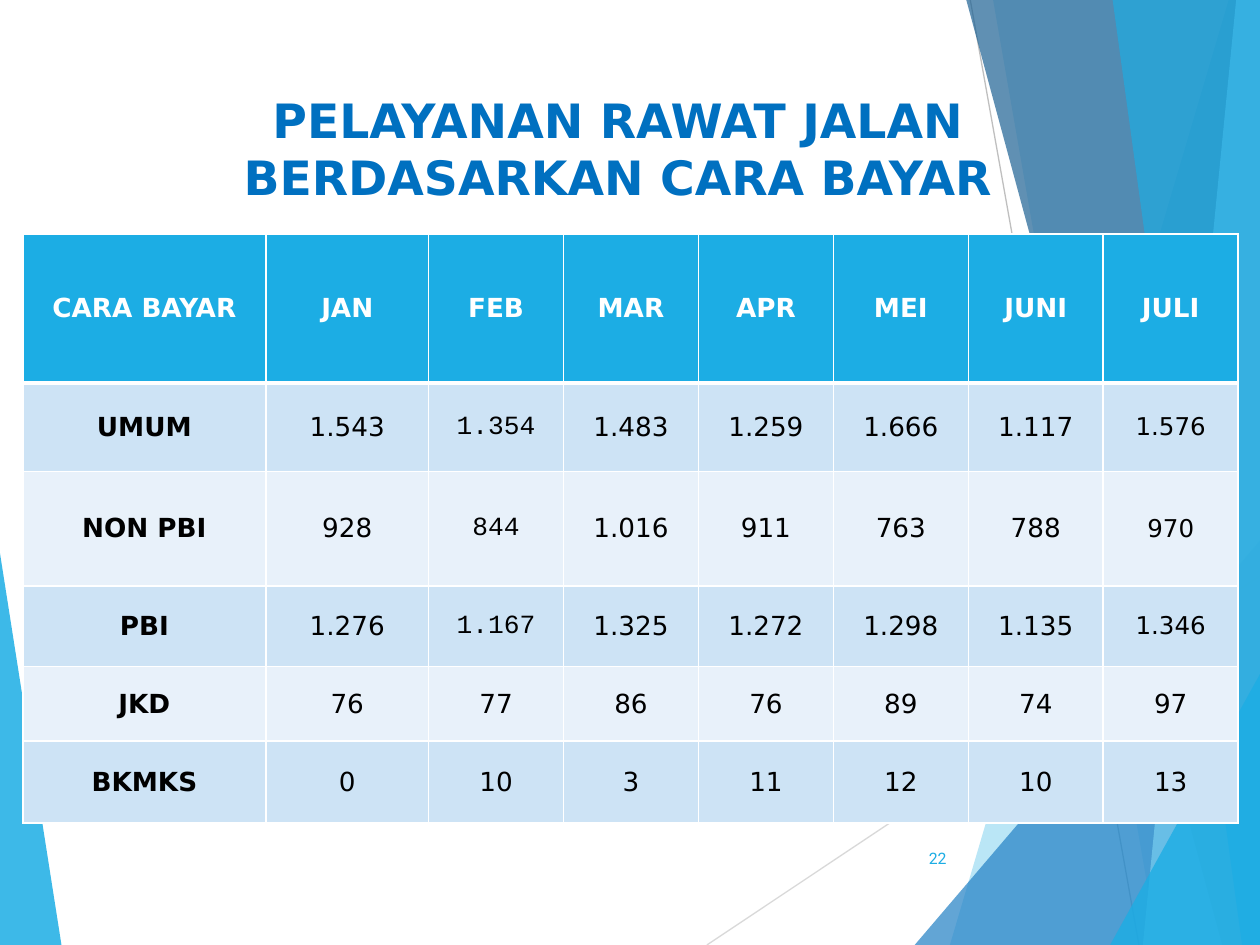
from dataclasses import dataclass
from lxml.etree import SubElement as Sub
from pptx import Presentation
from pptx.dml.color import RGBColor as Rgb
from pptx.enum.shapes import MSO_CONNECTOR as Link
from pptx.enum.text import MSO_ANCHOR as Anchor, PP_ALIGN as Align
from pptx.oxml.ns import qn
from pptx.util import Cm, Pt

WIDE, HIGH = 25.4, 19.05


@dataclass(frozen=True)
class Theme:
    blue: str = "1CADE4"
    mid: str = "2683C6"
    deep: str = "1D6294"
    pale: str = "77CEEF"
    title: str = "0070C0"
    white: str = "FFFFFF"
    black: str = "000000"
    odd: str = "CDE3F5"
    even: str = "E8F1FA"
    font: str = "DejaVu Sans"
    mono: str = "Courier New"
    small: str = "Roboto"
    head: float = 27
    lead: float = 32.6
    body: float = 15
    last: float = 14
    page: float = 9


class Deck:
    """Holds the theme and the current slide, and draws each kind of element."""

    def __init__(self, theme):
        self.theme = theme
        self.file = Presentation()
        self.file.slide_width, self.file.slide_height = Cm(WIDE), Cm(HIGH)
        self.slide = self.file.slides.add_slide(self.file.slide_layouts[6])
        self.shapes = self.slide.shapes

    def facet(self, points, color, alpha):
        spots = [(Cm(x), Cm(y)) for x, y in points]
        build = self.shapes.build_freeform(*spots[0])
        build.add_line_segments(spots[1:], close=True)
        shape = build.convert_to_shape()
        shape.shadow.inherit = False
        shape.line.fill.background()
        shape.fill.solid()
        shape.fill.fore_color.rgb = Rgb.from_string(color)
        tint = shape._element.spPr.find(".//" + qn("a:srgbClr"))
        Sub(tint, qn("a:alpha"), val=str(alpha * 1000))

    def line(self, ends, color):
        link = self.shapes.add_connector(Link.STRAIGHT, *map(Cm, ends))
        link.line.color.rgb = Rgb.from_string(color)
        link.line.width = Pt(0.75)
        Sub(link._element.spPr, qn("a:effectLst"))

    def style(self, para, size, color, font, bold=False, align=Align.CENTER):
        para.alignment = align
        for run in para.runs:
            run.font.size, run.font.name, run.font.bold = Pt(size), font, bold
            run.font.color.rgb = Rgb.from_string(color)

    def text(self, box, words, anchor, *look, lead=None, **more):
        frame = self.shapes.add_textbox(*map(Cm, box)).text_frame
        frame.word_wrap = True
        frame.vertical_anchor = anchor
        para = frame.paragraphs[0]
        para.text = words
        if lead:
            para.line_spacing = Pt(lead)
        self.style(para, *look, **more)

    def edge(self, cell, side, width):
        line = Sub(cell._tc.get_or_add_tcPr(), qn("a:ln" + side), w=str(Pt(width)))
        Sub(Sub(line, qn("a:solidFill")), qn("a:srgbClr"), val=self.theme.white)

    def cell(self, cell, row, col, words):
        look = self.theme
        head, upper = row == 0, 0 < row < 4
        wide = head or col == 0 or (col == 1 and upper)
        cell.margin_left = cell.margin_right = Cm(0.38 if wide else 0)
        cell.margin_top = cell.margin_bottom = Cm(0.18 if wide else 0)
        cell.vertical_anchor = Anchor.MIDDLE
        for side, width in zip("LRTB", (1, 1, 3 if row == 1 else 1, 3 if head else 1)):
            self.edge(cell, side, width)
        cell.fill.solid()
        fill = look.blue if head else look.odd if row % 2 else look.even
        cell.fill.fore_color.rgb = Rgb.from_string(fill)
        para = cell.text_frame.paragraphs[0]
        para.text = words
        self.style(
            para,
            look.last if upper and col == 7 else look.body,
            look.white if head else look.black,
            look.mono if upper and col == 2 else look.font,
            head or col == 0,
        )

    def table(self, left, top, cols, rows, data):
        box = map(Cm, (left, top, sum(cols), sum(rows)))
        grid = self.shapes.add_table(len(rows), len(cols), *box).table
        for col, width in zip(grid.columns, cols):
            col.width = Cm(width)
        for row, height in zip(grid.rows, rows):
            row.height = Cm(height)
        for r, line in enumerate(data):
            for c, words in enumerate(line):
                self.cell(grid.cell(r, c), r, c, words)


def band(top, base):
    return [(top, 0), (base, HIGH), (WIDE, HIGH), (WIDE, 0)]


def wedge(base, side):
    return [(base, HIGH), (WIDE, side), (WIDE, HIGH)]


DATA = [
    ["CARA BAYAR", "JAN", "FEB", "MAR", "APR", "MEI", "JUNI", "JULI"],
    ["UMUM", "1.543", "1.354", "1.483", "1.259", "1.666", "1.117", "1.576"],
    ["NON PBI", "928", "844", "1.016", "911", "763", "788", "970"],
    ["PBI", "1.276", "1.167", "1.325", "1.272", "1.298", "1.135", "1.346"],
    ["JKD", "76", "77", "86", "76", "89", "74", "97"],
    ["BKMKS", "0", "10", "3", "11", "12", "10", "13"],
]


def main():
    look = Theme()
    deck = Deck(look)
    deck.facet([(0, 11.15), (1.24, HIGH), (0, HIGH)], look.blue, 85)
    deck.line((14.25, HIGH, WIDE, 11.61), "D9D9D9")
    deck.line((19.56, 0, 22.96, HIGH), "BFBFBF")
    for points, color, alpha in (
        (band(24.77, 19.15), look.blue, 30),
        (band(20.02, 23.34), look.blue, 20),
        (wedge(18.44, 10.9), look.mid, 72),
        (band(19.48, 24.64), look.deep, 70),
        (band(24.92, 23.04), look.pale, 70),
        (band(22.43, 25.04), look.blue, 65),
        (wedge(22.38, 13.59), look.blue, 80),
    ):
        deck.facet(points, color, alpha)
    deck.text((1.02, 1.7, 22.86, 2.8), "PELAYANAN RAWAT JALAN\vBERDASARKAN CARA BAYAR",
              Anchor.TOP, look.head, look.title, look.font, True, lead=look.lead)
    deck.table(0.46, 4.72, [4.9, 3.28] + [2.72] * 6,
               [3, 1.78, 2.31, 1.63, 1.5, 1.65], DATA)
    deck.text((17.91, 16.79, 1.42, 1.02), "22", Anchor.MIDDLE,
              look.page, look.blue, look.small, align=Align.RIGHT)
    deck.file.save("out.pptx")


if __name__ == "__main__":
    main()
